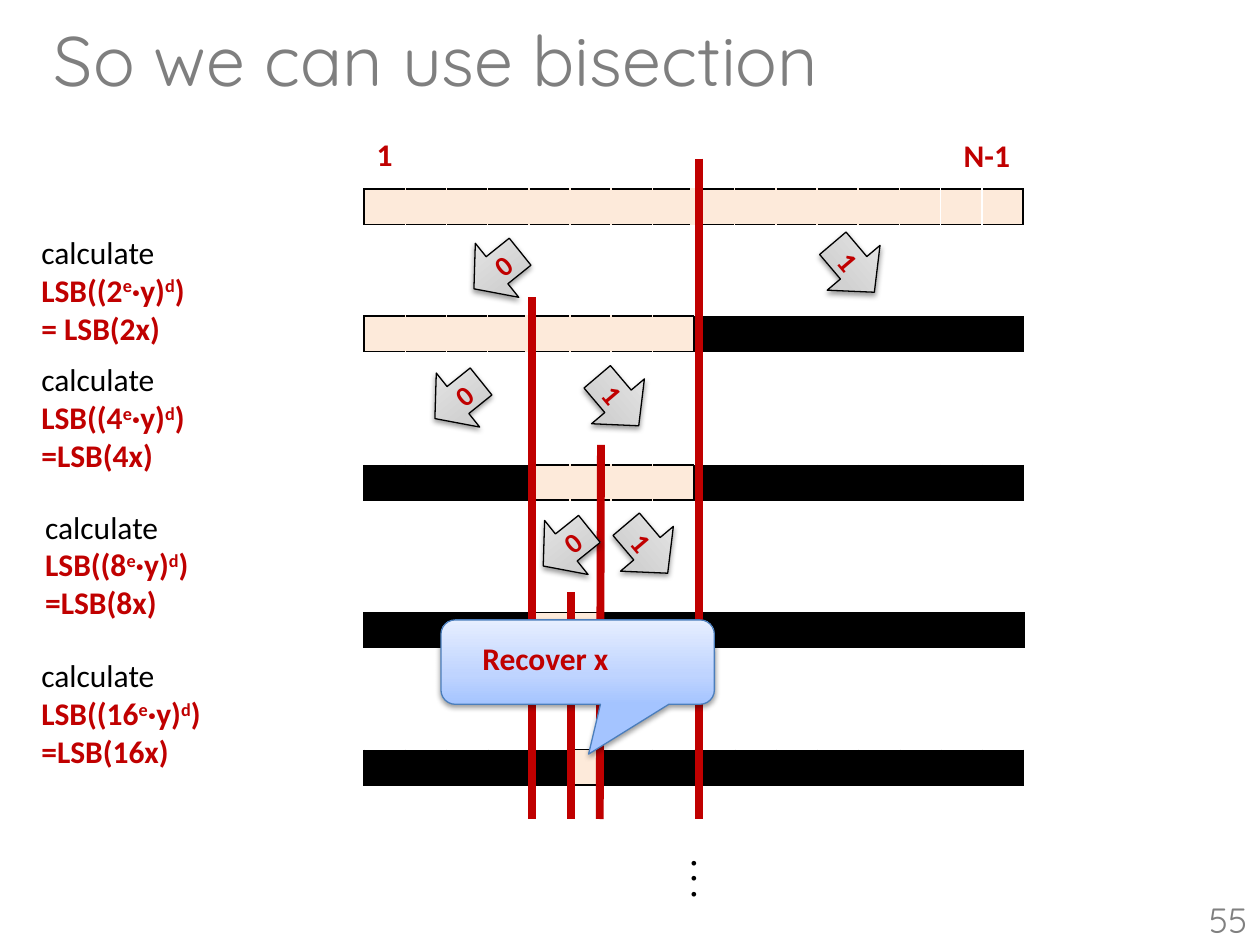
from copy import deepcopy
from typing import NamedTuple, Optional

from lxml.etree import SubElement
from pptx import Presentation
from pptx.dml.color import RGBColor
from pptx.enum.shapes import MSO_CONNECTOR, MSO_SHAPE
from pptx.enum.text import MSO_ANCHOR, PP_ALIGN
from pptx.oxml.ns import qn
from pptx.util import Inches, Pt

COLORS = {
    "black": "000000", "red": "C00000", "peach": "FDEADA",
    "title": "7F7F7F", "number": "808080", "callout_line": "4B7EBC",
}
GRAY_STOPS = ("BDBDBD", "D1D1D1", "EEEEEE")
BLUE_STOPS = ("A4C4FF", "BFD4FF", "E6EEFF")
CELLS = 16
BAR_LEFT, BAR_WIDTH, BAR_HEIGHT = 2.89, 5.23, 0.28


class Run(NamedTuple):
    text: str
    color: str = "red"
    size: float = 18
    bold: bool = True
    font: str = "Calibri"
    raised: bool = False


class Bar(NamedTuple):
    top: float
    start: int                       # first open cell
    end: int                         # one past the last open cell
    wide_seam: Optional[int] = None  # boundary drawn thick
    seam_end: int = CELLS            # no seams from this boundary on
    narrow: float = 0                # width moved from cell 5 to cell 6
    edge: float = 1                  # outline of the open cells


class Cut(NamedTuple):
    x: float
    top: float
    end_x: float


class Step(NamedTuple):
    left: float
    top: float
    width: float
    factor: str
    result: str


class Arrow(NamedTuple):
    left: float
    top: float
    bit: int


BARS = [
    Bar(1.5, 0, 16, wide_seam=8, seam_end=14),
    Bar(2.51, 0, 8, wide_seam=4),
    Bar(3.69, 4, 8),
    Bar(4.86, 4, 6, narrow=0.1, edge=0.25),
    Bar(5.95, 5, 6, narrow=0.09),
]
CUTS = [Cut(5.55, 1.26, 5.55), Cut(4.22, 2.36, 4.22),
        Cut(4.77, 3.53, 4.76), Cut(4.53, 4.7, 4.53)]
STEPS = [
    Step(0.23, 1.8, 1.37, "2", "= LSB(2x)"),
    Step(0.23, 2.81, 1.37, "4", "=LSB(4x)"),
    Step(0.26, 3.98, 1.37, "8", "=LSB(8x)"),
    Step(0.23, 5.16, 1.5, "16", "=LSB(16x)"),
]
ARROWS = [Arrow(3.71, 1.87, 0), Arrow(6.52, 1.85, 1),
          Arrow(3.4, 2.9, 0), Arrow(4.65, 2.91, 1),
          Arrow(4.26, 4.07, 0), Arrow(4.88, 4.08, 1)]


def rgb(name: str) -> RGBColor:
    return RGBColor.from_string(COLORS[name])


def add_runs(p, runs: list[Run]) -> None:
    for run in runs:
        r = p.add_run()
        r.text = run.text
        r.font.name, r.font.size, r.font.bold = run.font, Pt(run.size), run.bold
        r.font.color.rgb = rgb(run.color)
        if run.raised:
            r.font._element.set("baseline", "30000")


def add_text(slide, box: tuple, lines: list[list[Run]], wrap: bool = False,
             align=PP_ALIGN.LEFT, anchor=MSO_ANCHOR.TOP):
    sp = slide.shapes.add_textbox(*map(Inches, box))
    tf = sp.text_frame
    tf.word_wrap, tf.vertical_anchor = wrap, anchor
    for i, runs in enumerate(lines):
        p = tf.add_paragraph() if i else tf.paragraphs[0]
        p.alignment = align
        add_runs(p, runs)
    return sp


def set_border(tc_pr, side: str, color: str, width: float) -> None:
    ln = SubElement(tc_pr, qn(f"a:{side}"), w=str(Pt(width)))
    fill = SubElement(ln, qn("a:solidFill"))
    SubElement(fill, qn("a:srgbClr"), val=COLORS[color])


def add_bar(slide, bar: Bar) -> None:
    frame = slide.shapes.add_table(1, CELLS, Inches(BAR_LEFT), Inches(bar.top),
                                   Inches(BAR_WIDTH), Inches(BAR_HEIGHT))
    table = frame.table
    table.first_row = table.horz_banding = False
    table.rows[0].height = Inches(BAR_HEIGHT)
    shift = {5: -bar.narrow, 6: bar.narrow}

    def boundary(i: int) -> Optional[tuple[str, float]]:
        if bar.start < i < bar.end:
            if i >= bar.seam_end:
                return None
            return "peach", 4.5 if i == bar.wide_seam else bar.edge
        return "black", 1 if i in (0, CELLS) else 0.25

    for i in range(CELLS):
        table.columns[i].width = Inches(BAR_WIDTH / CELLS + shift.get(i, 0))
        is_open = bar.start <= i < bar.end
        cell = table.cell(0, i)
        cell.margin_top = cell.margin_bottom = 0
        SubElement(cell.text_frame.paragraphs[0]._p, qn("a:endParaRPr"), sz="800")
        tc_pr = cell._tc.get_or_add_tcPr()
        rim = ("black", bar.edge if is_open else 0.25)
        borders = {"lnL": boundary(i), "lnR": boundary(i + 1),
                   "lnT": rim, "lnB": rim}
        for side, border in borders.items():
            if border:
                set_border(tc_pr, side, *border)
        cell.fill.solid()
        cell.fill.fore_color.rgb = rgb("peach" if is_open else "black")


def add_cut(slide, cut: Cut) -> None:
    line = slide.shapes.add_connector(
        MSO_CONNECTOR.STRAIGHT, Inches(cut.x), Inches(cut.top),
        Inches(cut.end_x), Inches(6.5))
    line.line.color.rgb, line.line.width = rgb("red"), Pt(4.5)
    SubElement(line._element.spPr, qn("a:effectLst"))


def add_raised_shape(slide, kind, box: tuple, stops: tuple, line: str):
    """Add a shape with a three-stop gradient and a soft shadow below it."""
    sp = slide.shapes.add_shape(kind, *map(Inches, box))
    sp.fill.gradient()
    sp.fill.gradient_angle = 90
    first = sp._element.spPr.find(".//" + qn("a:gs"))
    first.addnext(deepcopy(first))
    for stop, position, color in zip(sp.fill.gradient_stops, (0, 0.35, 1), stops):
        stop.position = position
        stop.color.rgb = RGBColor.from_string(color)
    sp.line.color.rgb, sp.line.width = rgb(line), Pt(0.75)
    sp.shadow.inherit = False
    effects = sp._element.spPr.find(qn("a:effectLst"))
    shadow = SubElement(effects, qn("a:outerShdw"), blurRad=str(Pt(3.1)),
                        dist=str(Pt(1.6)), dir="5400000", rotWithShape="0")
    color = SubElement(shadow, qn("a:srgbClr"), val=COLORS["black"])
    SubElement(color, qn("a:alpha"), val="38000")
    return sp


def add_arrow(slide, arrow: Arrow) -> None:
    width = 0.51 if arrow.bit else 0.47
    sp = add_raised_shape(slide, MSO_SHAPE.LEFT_ARROW,
                          (arrow.left, arrow.top, width, 0.55), GRAY_STOPS, "black")
    sp.rotation = 49.7 if arrow.bit else 321.2
    if arrow.bit:
        sp._element.spPr.xfrm.set("flipH", "1")
    tf = sp.text_frame
    tf.vertical_anchor = MSO_ANCHOR.MIDDLE
    p = tf.paragraphs[0]
    p.alignment = PP_ALIGN.CENTER
    add_runs(p, [Run(str(arrow.bit), size=16)])


def add_step(slide, step: Step) -> None:
    formula = [Run(f"LSB(({step.factor}"), Run("e", raised=True), Run("·y)"),
               Run("d", raised=True), Run(")")]
    add_text(slide, (step.left, step.top, step.width, 1.01),
             [[Run("calculate", "black", bold=False)], formula, [Run(step.result)]])


def main() -> None:
    prs = Presentation()
    prs.slide_width, prs.slide_height = Inches(10), Inches(7.5)
    slide = prs.slides.add_slide(prs.slide_layouts[6])

    # Search intervals and their midpoints
    for bar in BARS:
        add_bar(slide, bar)
    for cut in CUTS:
        add_cut(slide, cut)

    # Interval ends and continuation dots
    add_text(slide, (2.89, 1.02, 0.33, 0.4), [[Run("1")]])
    add_text(slide, (7.55, 1.03, 0.57, 0.4), [[Run("N-1")]])
    dots = add_text(slide, (5.33, 6.78, 0.52, 0.4), [[Run(". . .", "black")]])
    dots.rotation = 90

    # Calculations and branch arrows
    for step in STEPS:
        add_step(slide, step)
    for arrow in ARROWS:
        add_arrow(slide, arrow)

    # Title, callout and slide number
    add_text(slide, (0.33, 0.08, 9.33, 0.77),
             [[Run("So we can use bisection", "title", 40, False, "Quicksand")]], wrap=True)
    callout = add_raised_shape(slide, MSO_SHAPE.ROUNDED_RECTANGULAR_CALLOUT,
                               (3.5, 4.92, 2.17, 0.67), BLUE_STOPS, "callout_line")
    for i, value in enumerate((0.04, 1.09, 0.17)):
        callout.adjustments[i] = value
    add_text(slide, (3.73, 5.02, 1.83, 0.4), [[Run("Recover x")]], wrap=True)
    add_text(slide, (7.67, 7.1, 2.33, 0.4),
             [[Run("55", "number", 20, False, "Quicksand")]], wrap=True,
             align=PP_ALIGN.RIGHT, anchor=MSO_ANCHOR.MIDDLE)

    prs.save("out.pptx")


if __name__ == "__main__":
    main()
